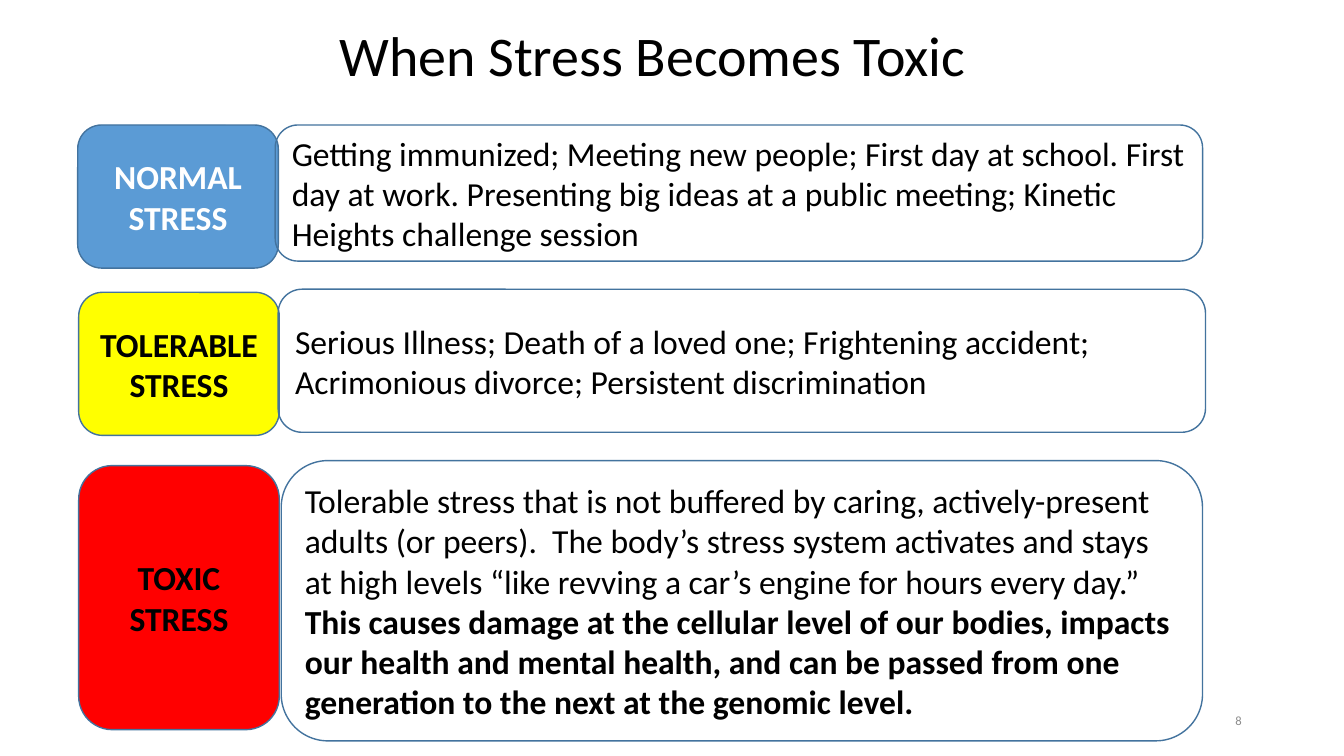
import dataclasses

import pptx
import pptx.dml.color
import pptx.enum.shapes
import pptx.enum.text
import pptx.util

Pt = pptx.util.Pt
Align = pptx.enum.text.PP_ALIGN
Anchor = pptx.enum.text.MSO_ANCHOR


@dataclasses.dataclass(frozen=True)
class Theme:
    font: str = "Calibri"
    title_size: float = 40
    body_size: float = 24
    number_size: float = 9
    ink: str = "000000"
    light: str = "FFFFFF"
    muted: str = "8C8C8C"
    outline: str = "43739E"
    normal: str = "5B9BD5"
    tolerable: str = "FFFF00"
    toxic: str = "FF0000"


THEME = Theme()

# Each level: label, fill, label colour, label box, description box, plain text, bold text
STRESS_LEVELS = [
    ("NORMAL STRESS", THEME.normal, THEME.light,
     (55.5, 89.3, 143.3, 102.2), (196.6, 89.3, 662.4, 97.2),
     "Getting immunized; Meeting new people; First day at school. First day at work. "
     "Presenting big ideas at a public meeting; Kinetic Heights challenge session", ""),
    ("TOLERABLE STRESS", THEME.tolerable, THEME.ink,
     (56.2, 208.8, 143.3, 102.2), (198.7, 206.6, 662.4, 102.2),
     "Serious Illness; Death of a loved one; Frightening accident; "
     "Acrimonious divorce; Persistent discrimination", ""),
    ("TOXIC STRESS", THEME.toxic, THEME.ink,
     (56.2, 332.6, 143.3, 188.6), (200.9, 329, 658.1, 200.2),
     "Tolerable stress that is not buffered by caring, actively-present adults (or peers).  "
     "The body’s stress system activates and stays at high levels "
     "“like revving a car’s engine for hours every day.” ",
     "This causes damage at the cellular level of our bodies, impacts our health and "
     "mental health, and can be passed from one generation to the next at the genomic level."),
]


def rgb(color):
    return pptx.dml.color.RGBColor.from_string(color)


def format_span(span, size, color, bold=False):
    span.font.name = THEME.font
    span.font.size = Pt(size)
    span.font.color.rgb = rgb(color)
    span.font.bold = bold


def add_rounded_box(page, box, fill=None):
    shape = page.shapes.add_shape(
        pptx.enum.shapes.MSO_SHAPE.ROUNDED_RECTANGLE, *map(Pt, box))
    shape.shadow.inherit = False
    if fill:
        shape.fill.solid()
        shape.fill.fore_color.rgb = rgb(fill)
    else:
        shape.fill.background()
    shape.line.color.rgb = rgb(THEME.outline)
    shape.line.width = Pt(1)
    shape.text_frame.word_wrap = True
    shape.text_frame.vertical_anchor = Anchor.MIDDLE
    return shape


def add_stress_level(page, label, fill, label_color, label_box, text_box, plain, strong):
    """Place a coloured label and the outlined description beside it."""
    para = add_rounded_box(page, label_box, fill).text_frame.paragraphs[0]
    para.text = label
    para.alignment = Align.CENTER
    format_span(para.runs[0], THEME.body_size, label_color, bold=True)

    para = add_rounded_box(page, text_box).text_frame.paragraphs[0]
    para.text = plain
    para.alignment = Align.LEFT
    format_span(para.runs[0], THEME.body_size, THEME.ink)
    if strong:
        span = para.add_run()
        span.text = strong
        format_span(span, THEME.body_size, THEME.ink, bold=True)


def set_title(page, box, text):
    title = page.shapes.title
    title.left, title.top, title.width, title.height = map(Pt, box)
    frame = title.text_frame
    frame.text = text
    frame.word_wrap = False
    frame.auto_size = pptx.enum.text.MSO_AUTO_SIZE.NONE
    frame.vertical_anchor = Anchor.TOP
    para = frame.paragraphs[0]
    para.alignment = Align.LEFT
    format_span(para.runs[0], THEME.title_size, THEME.ink)


def add_page_number(page, box, number):
    frame = page.shapes.add_textbox(*map(Pt, box)).text_frame
    frame.word_wrap = True
    frame.vertical_anchor = Anchor.MIDDLE
    para = frame.paragraphs[0]
    para.text = number
    para.alignment = Align.RIGHT
    format_span(para.runs[0], THEME.number_size, THEME.muted)


def main():
    deck = pptx.Presentation()
    deck.slide_width, deck.slide_height = Pt(960), Pt(540)
    page = deck.slides.add_slide(deck.slide_layouts.get_by_name("Title Only"))
    set_title(page, (235.4, 10.8, 461.5, 55.4), "When Stress Becomes Toxic")
    for level in STRESS_LEVELS:
        add_stress_level(page, *level)
    add_page_number(page, (678, 500.5, 216, 28.8), "8")
    deck.save("out.pptx")


if __name__ == "__main__":
    main()
